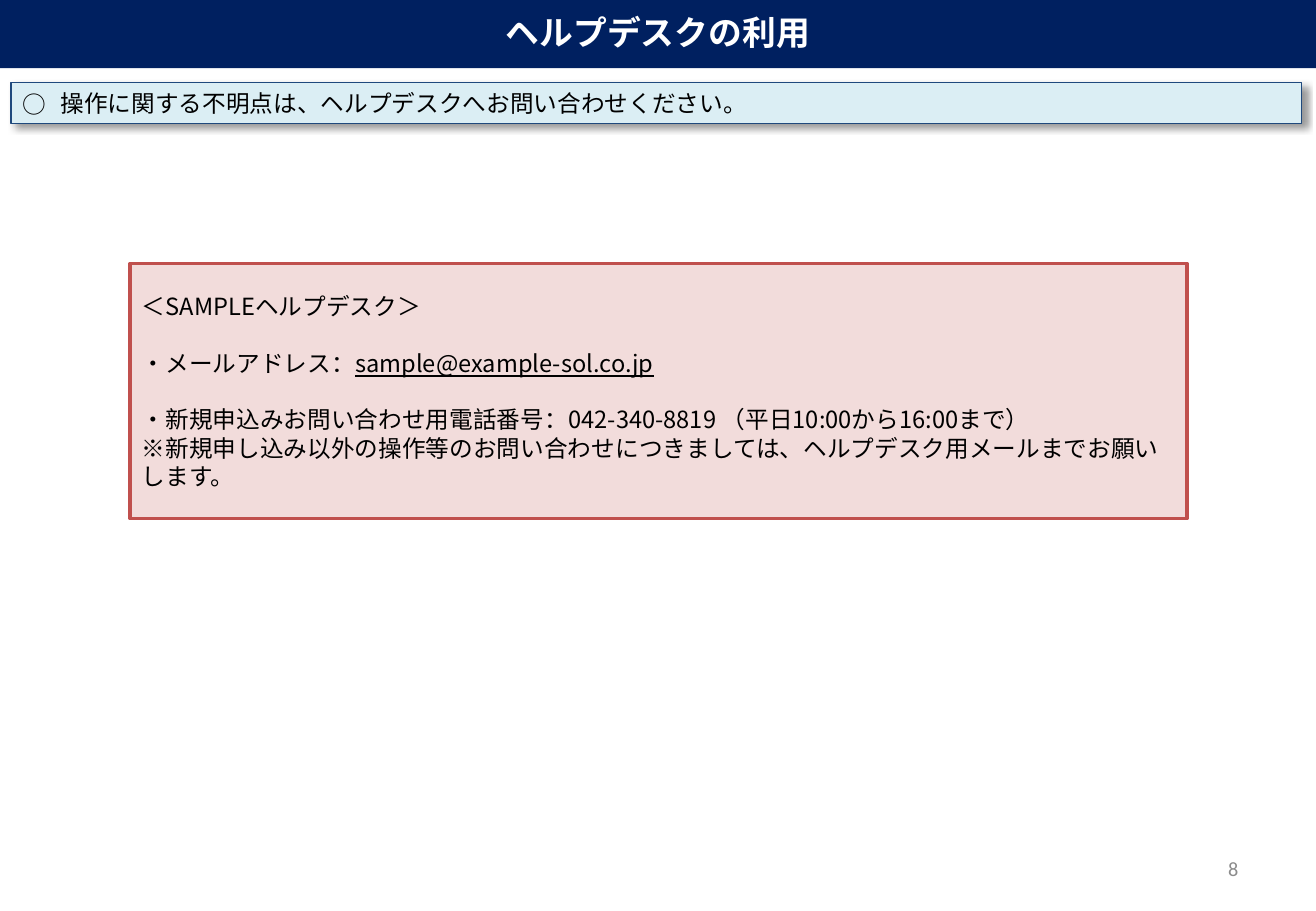
"""Build the help desk slide with its title bar, lead message and contact panel."""
import pptx
import pptx.util
import pptx.dml.color
import pptx.enum.shapes
import pptx.enum.text
import pptx.oxml
import pptx.oxml.ns
import lxml.etree

Inches = pptx.util.Inches
Pt = pptx.util.Pt
RGBColor = pptx.dml.color.RGBColor
PP_ALIGN = pptx.enum.text.PP_ALIGN
MIDDLE = pptx.enum.text.MSO_ANCHOR.MIDDLE
RECTANGLE = pptx.enum.shapes.MSO_SHAPE.RECTANGLE
qn = pptx.oxml.ns.qn

NAVY = RGBColor(0x00, 0x20, 0x60)
BLUE = RGBColor(0x1F, 0x49, 0x7D)
PALE_BLUE = RGBColor(0xDB, 0xEE, 0xF4)
RED = RGBColor(0xC0, 0x50, 0x4D)
PALE_RED = RGBColor(0xF2, 0xDC, 0xDB)
BLACK = RGBColor(0x00, 0x00, 0x00)
WHITE = RGBColor(0xFF, 0xFF, 0xFF)
GRAY = RGBColor(0x8C, 0x8C, 0x8C)
JAPANESE = "Noto Sans CJK JP"
LINE_HEIGHT = Pt(16.8)


def add_text(paragraph, text, size=14, color=BLACK, font=JAPANESE):
    run = paragraph.add_run()
    run.text = text
    run.font.size = Pt(size)
    run.font.color.rgb = color
    run.font.name = font
    east_asian = lxml.etree.SubElement(run.font._element, qn("a:ea"))
    east_asian.set("typeface", font)
    return run


def add_panel(left, top, width, height, fill, line, line_width):
    panel = slide.shapes.add_shape(
        RECTANGLE, Inches(left), Inches(top), Inches(width), Inches(height))
    panel.shadow.inherit = False
    panel.fill.solid()
    panel.fill.fore_color.rgb = fill
    panel.line.color.rgb = line
    panel.line.width = Pt(line_width)
    panel.text_frame.word_wrap = True
    panel.text_frame.vertical_anchor = MIDDLE
    return panel


deck = pptx.Presentation()
deck.slide_width = Inches(10.83)
deck.slide_height = Inches(7.5)
slide = deck.slides.add_slide(deck.slide_layouts[5])

title = slide.shapes.title
title.left, title.top = Inches(0), Inches(-0.03)
title.width, title.height = Inches(10.83), Inches(0.59)
title.fill.solid()
title.fill.fore_color.rgb = NAVY
title.text_frame.auto_size = pptx.enum.text.MSO_AUTO_SIZE.NONE
title.text_frame.vertical_anchor = MIDDLE
heading = title.text_frame.paragraphs[0]
heading.alignment = PP_ALIGN.CENTER
add_text(heading, "ヘルプデスクの利用", 20, WHITE).font.bold = True

page_number = slide.shapes.add_textbox(
    Inches(7.76), Inches(6.95), Inches(2.53), Inches(0.4))
page_number.text_frame.word_wrap = True
page_number.text_frame.vertical_anchor = MIDDLE
page_line = page_number.text_frame.paragraphs[0]
page_line.alignment = PP_ALIGN.RIGHT
add_text(page_line, "8", 12, GRAY, "Calibri")

message = add_panel(0.09, 0.68, 10.62, 0.34, PALE_BLUE, BLUE, 0.75)
message_effects = message._element.spPr.find(qn("a:effectLst"))
message_effects.append(pptx.oxml.parse_xml(
    '<a:outerShdw xmlns:a="http://schemas.openxmlformats.org/drawingml/2006/main"'
    f' blurRad="{Pt(4)}" dist="{Pt(3)}" dir="2700000" algn="tl" rotWithShape="0">'
    '<a:srgbClr val="000000"><a:alpha val="40000"/></a:srgbClr></a:outerShdw>'))
message_line = message.text_frame.paragraphs[0]
message_line.alignment = PP_ALIGN.LEFT
message_line.line_spacing = LINE_HEIGHT
message_format = message_line._p.get_or_add_pPr()
message_format.set("marL", str(Inches(0.31)))
message_format.set("indent", str(Inches(-0.31)))
lxml.etree.SubElement(message_format, qn("a:buFont")).set("typeface", JAPANESE)
lxml.etree.SubElement(message_format, qn("a:buChar")).set("char", "○")
add_text(message_line, "操作に関する不明点は、ヘルプデスクへお問い合わせください。")

contact = add_panel(1.07, 2.17, 8.7, 2.1, PALE_RED, RED, 2)
contact_lines = [
    (["＜SAMPLEヘルプデスク＞"], LINE_HEIGHT),
    (["・メールアドレス：", "sample@example-sol.co.jp"], LINE_HEIGHT),
    (["・新規申込みお問い合わせ用電話番号：042-340-8819 （平日10:00から16:00まで）"], 0),
    (["※新規申し込み以外の操作等のお問い合わせにつきましては、"
      "ヘルプデスク用メールまでお願いします。"], 0),
]
for index, (pieces, gap) in enumerate(contact_lines):
    frame = contact.text_frame
    contact_line = frame.add_paragraph() if index else frame.paragraphs[0]
    contact_line.alignment = PP_ALIGN.LEFT
    contact_line.line_spacing = LINE_HEIGHT
    contact_line.space_after = gap
    for piece in pieces:
        add_text(contact_line, piece).font.underline = "@" in piece

deck.save("out.pptx")
